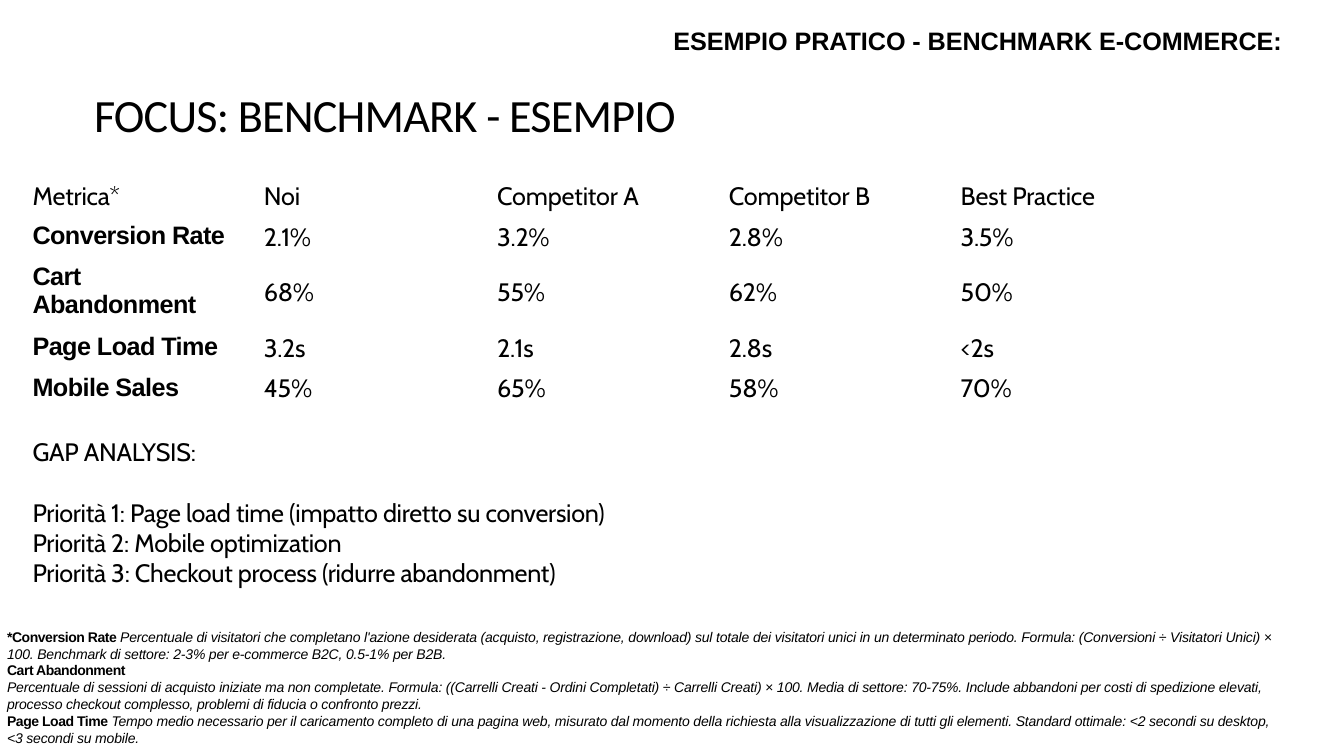
from pptx import Presentation
from pptx.dml.color import RGBColor
from pptx.enum.text import MSO_ANCHOR, MSO_AUTO_SIZE, PP_ALIGN
from pptx.oxml.ns import qn
from pptx.util import Cm, Pt
from lxml import etree

LEFT = PP_ALIGN.LEFT
TOP = MSO_ANCHOR.TOP
MIDDLE = MSO_ANCHOR.MIDDLE
GROW = MSO_AUTO_SIZE.SHAPE_TO_FIT_TEXT

BLACK = RGBColor(0x00, 0x00, 0x00)

HEADING_FONT = "Calibri"
STRONG_FONT = "Arial"
BODY_FONT = "Cabin"

METRICS = [
    ["Metrica*", "Noi", "Competitor A", "Competitor B", "Best Practice"],
    ["Conversion Rate", "2.1%", "3.2%", "2.8%", "3.5%"],
    ["Cart\nAbandonment", "68%", "55%", "62%", "50%"],
    ["Page Load Time", "3.2s", "2.1s", "2.8s", "<2s"],
    ["Mobile Sales", "45%", "65%", "58%", "70%"],
]
COLUMN_WIDTHS = [5.38, 4.17, 6.99, 5.84, 4.8]
COLUMN_INDENTS = [0.08, 0.53, 2.24, 1.09, 1.09]
ROW_HEIGHTS = [0.89, 1.02, 1.78, 1.02, 0.89]

PRIORITIES = [
    "Priorità 1: Page load time (impatto diretto su conversion)",
    "Priorità 2: Mobile optimization",
    "Priorità 3: Checkout process (ridurre abandonment)",
]

# Each paragraph pairs a bold term with its italic definition
DEFINITIONS = [
    ("*Conversion Rate ",
     "Percentuale di visitatori che completano l'azione desiderata (acquisto, "
     "registrazione, download) sul totale dei visitatori unici in un determinato "
     "periodo. Formula: (Conversioni ÷ Visitatori Unici) × 100. Benchmark di "
     "settore: 2-3% per e-commerce B2C, 0.5-1% per B2B."),
    ("Cart Abandonment", ""),
    ("",
     "Percentuale di sessioni di acquisto iniziate ma non completate. Formula: "
     "((Carrelli Creati - Ordini Completati) ÷ Carrelli Creati) × 100. Media di "
     "settore: 70-75%. Include abbandoni per costi di spedizione elevati, processo "
     "checkout complesso, problemi di fiducia o confronto prezzi."),
    ("Page Load Time ",
     "Tempo medio necessario per il caricamento completo di una pagina web, misurato "
     "dal momento della richiesta alla visualizzazione di tutti gli elementi. Standard "
     "ottimale: <2 secondi su desktop, <3 secondi su mobile."),
]


def add_text(paragraph, text, *, font=BODY_FONT, size=18, bold=False, italic=False,
             color=BLACK, tracking=-0.1):
    """Append a formatted run; tracking is in points."""
    run = paragraph.add_run()
    run.text = text
    run.font.name = font
    run.font.size = Pt(size)
    run.font.bold = bold
    run.font.italic = italic
    run.font.color.rgb = color
    run.font._element.set("spc", str(round(tracking * 100)))


class BenchmarkSlide:
    def __init__(self, presentation):
        self.slide = presentation.slides.add_slide(presentation.slide_layouts[1])

    def prepare(self, shape, box, anchor=TOP, margin_right=0):
        """Place a text shape and return its frame."""
        shape.left, shape.top, shape.width, shape.height = map(Cm, box)
        frame = shape.text_frame
        frame.word_wrap = True
        frame.auto_size = GROW
        frame.vertical_anchor = anchor
        frame.margin_left = frame.margin_bottom = 0
        frame.margin_top = Cm(0.03)
        frame.margin_right = Cm(margin_right)
        return frame

    def paragraphs(self, frame, count, indent=0.03):
        """Return plain left-aligned paragraphs without bullets."""
        while len(frame.paragraphs) < count:
            frame.add_paragraph()
        for paragraph in frame.paragraphs:
            paragraph.alignment = LEFT
            paragraph.space_before = Pt(0)
            paragraph.line_spacing = 1.0
            properties = paragraph._p.get_or_add_pPr()
            properties.set("marL", str(Cm(indent)))
            properties.set("indent", "0")
            etree.SubElement(properties, qn("a:buNone"))
        return frame.paragraphs

    def title(self, text, box):
        frame = self.prepare(self.slide.shapes.title, box, MIDDLE)
        add_text(self.paragraphs(frame, 1)[0], text,
                 font=HEADING_FONT, size=33, tracking=-0.6)

    def text_box(self, box, margin_right=0):
        shape = self.slide.shapes.add_textbox(0, 0, 0, 0)
        return self.prepare(shape, box, margin_right=margin_right)

    def section_label(self, text, box):
        frame = self.text_box(box)
        add_text(self.paragraphs(frame, 1)[0], text,
                 font=STRONG_FONT, bold=True, tracking=-0.05)

    def priority_list(self, heading, items, box):
        frame = self.prepare(self.slide.placeholders[1], box)
        lines = self.paragraphs(frame, len(items) + 1)
        for line, text in zip(lines, [heading, *items]):
            add_text(line, text, tracking=-0.2)
        lines[1].space_before = Pt(21.6)

    def definitions(self, entries, box):
        frame = self.text_box(box, margin_right=0.84)
        for line, (term, meaning) in zip(self.paragraphs(frame, len(entries)), entries):
            if term:
                add_text(line, term, font=STRONG_FONT, size=10, bold=True, tracking=-0.3)
            if meaning:
                add_text(line, meaning, font=STRONG_FONT, size=10, italic=True)

    def metrics_table(self, rows, left, top):
        table = self.slide.shapes.add_table(
            len(rows), len(COLUMN_WIDTHS), Cm(left), Cm(top),
            Cm(sum(COLUMN_WIDTHS)), Cm(sum(ROW_HEIGHTS))).table
        table.first_row = table.horz_banding = False
        for column, width in zip(table.columns, COLUMN_WIDTHS):
            column.width = Cm(width)
        for row, height in zip(table.rows, ROW_HEIGHTS):
            row.height = Cm(height)
        for r, row in enumerate(rows):
            for c, text in enumerate(row):
                self.metric_cell(table.cell(r, c), text, r, c, "\n" in row[0])

    def metric_cell(self, cell, text, r, c, tall_row):
        is_header, is_metric = r == 0, c == 0 and r > 0
        cell.fill.background()
        cell.margin_left = cell.margin_right = cell.margin_bottom = 0
        cell.margin_top = Cm(0 if is_header else 0.46 if tall_row and c else 0.08)
        parts = text.split("\n")
        lines = self.paragraphs(cell.text_frame, len(parts), COLUMN_INDENTS[c])
        for line, part in zip(lines, parts):
            if is_header:
                line.line_spacing = Pt(20.5)
            if is_metric:
                add_text(line, part, font=STRONG_FONT, bold=True, tracking=-0.4)
            else:
                add_text(line, part, tracking=-0.1 if is_header else -0.2)


def main():
    presentation = Presentation()
    presentation.slide_width = Cm(33.87)
    presentation.slide_height = Cm(19.05)
    benchmark = BenchmarkSlide(presentation)

    # Headings
    benchmark.title("FOCUS: BENCHMARK - ESEMPIO", (2.34, 1.02, 29.21, 3.68))
    benchmark.section_label("ESEMPIO PRATICO - BENCHMARK E-COMMERCE:",
                            (16.94, 0.61, 15.47, 0.84))

    # Comparison and resulting priorities
    benchmark.metrics_table(METRICS, 0.74, 4.62)
    benchmark.priority_list("GAP ANALYSIS:", PRIORITIES, (0.79, 10.97, 15.37, 3.89))

    # Metric definitions
    benchmark.definitions(DEFINITIONS, (0.15, 15.8, 33.15, 3.02))

    presentation.save("out.pptx")


if __name__ == "__main__":
    main()
